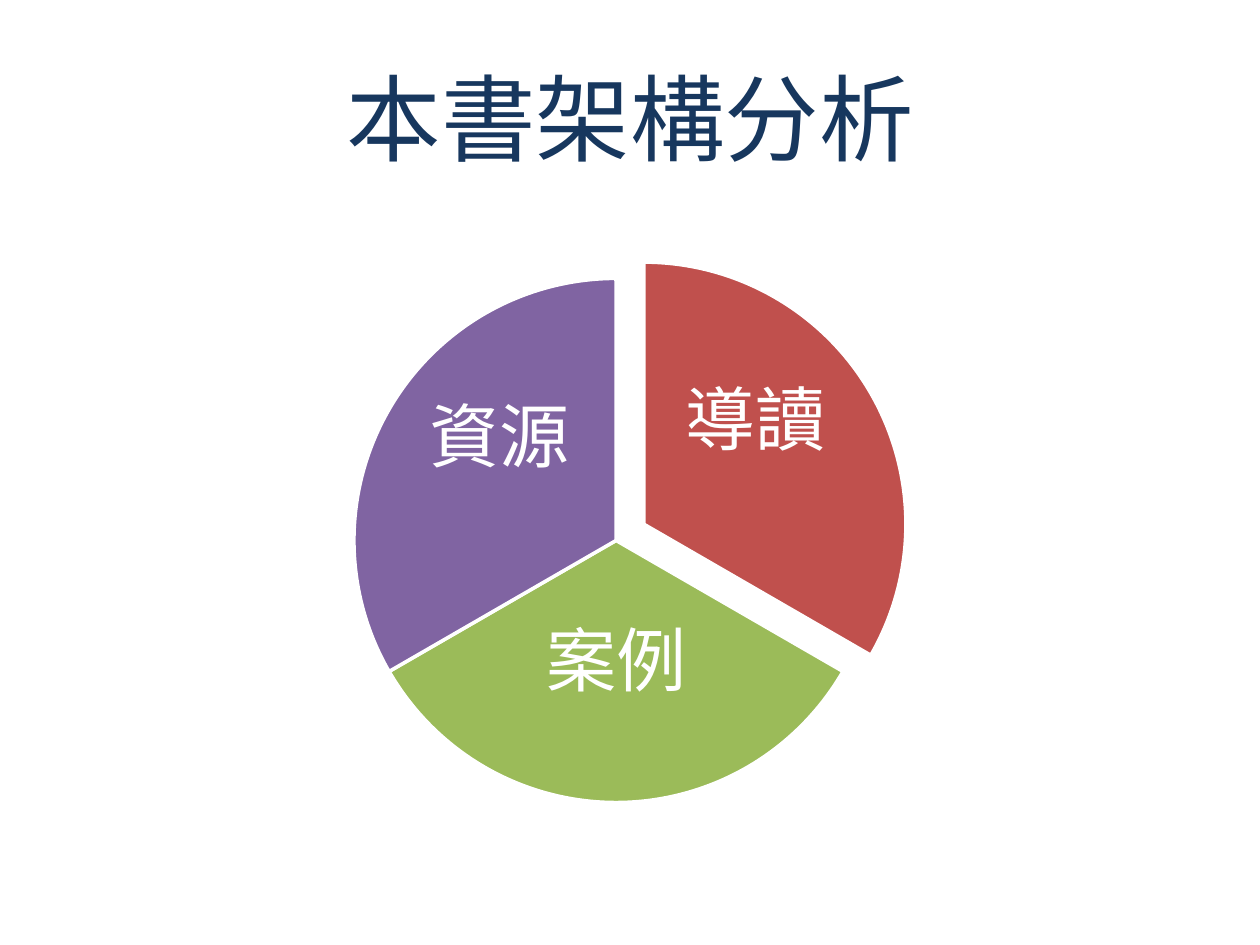
"""Build a slide that shows the three parts of the book as pie slices."""
from dataclasses import dataclass

from pptx import Presentation
from pptx.dml.color import RGBColor
from pptx.enum.shapes import MSO_SHAPE
from pptx.enum.text import MSO_ANCHOR, PP_ALIGN
from pptx.slide import Slide
from pptx.text.text import TextFrame
from pptx.util import Pt

DIAMETER = 299.5
LABEL_WIDTH, LABEL_HEIGHT = 110, 70
WHITE = "FFFFFF"


@dataclass
class Slice:
    label: str
    color: str
    left: float
    top: float
    start_degrees: float
    end_degrees: float
    label_x: float
    label_y: float


SLICES = [
    Slice("導讀", "C0504D", 218.2, 149.8, 270, 30, 431.7, 238.3),
    Slice("案例", "9BBB59", 202.3, 159.1, 30, 150, 352, 376.5),
    Slice("資源", "8064A2", 202.3, 159.1, 150, 270, 285.4, 248.4),
]


def rgb(value: str) -> RGBColor:
    return RGBColor.from_string(value)


def write_text(frame: TextFrame, text: str, *, size: float, color: str) -> None:
    frame.word_wrap = True
    frame.vertical_anchor = MSO_ANCHOR.MIDDLE
    para = frame.paragraphs[0]
    para.alignment = PP_ALIGN.CENTER
    span = para.add_run()
    span.text = text
    span.font.name = "Arial"
    span.font.size = Pt(size)
    span.font.color.rgb = rgb(color)


def draw_slice(page: Slide, part: Slice) -> None:
    pie = page.shapes.add_shape(
        MSO_SHAPE.PIE, Pt(part.left), Pt(part.top), Pt(DIAMETER), Pt(DIAMETER)
    )
    pie.adjustments[0] = part.start_degrees * 0.6
    pie.adjustments[1] = part.end_degrees * 0.6
    pie.shadow.inherit = False
    pie.fill.solid()
    pie.fill.fore_color.rgb = rgb(part.color)
    pie.line.color.rgb = rgb(WHITE)
    pie.line.width = Pt(2)


def draw_label(page: Slide, part: Slice) -> None:
    box = page.shapes.add_textbox(
        Pt(part.label_x - LABEL_WIDTH / 2), Pt(part.label_y - LABEL_HEIGHT / 2),
        Pt(LABEL_WIDTH), Pt(LABEL_HEIGHT),
    )
    frame = box.text_frame
    frame.margin_left = frame.margin_right = Pt(4)
    frame.margin_top = frame.margin_bottom = Pt(4)
    write_text(frame, part.label, size=40, color=WHITE)


def main() -> None:
    deck = Presentation()
    deck.slide_width, deck.slide_height = Pt(720), Pt(540)
    page = deck.slides.add_slide(deck.slide_layouts[5])
    title = page.shapes.title
    title.left, title.top = Pt(36), Pt(21.6)
    title.width, title.height = Pt(648), Pt(90)
    write_text(title.text_frame, "本書架構分析", size=54, color="17375E")
    for part in SLICES:
        draw_slice(page, part)
        draw_label(page, part)
    deck.save("out.pptx")


if __name__ == "__main__":
    main()
